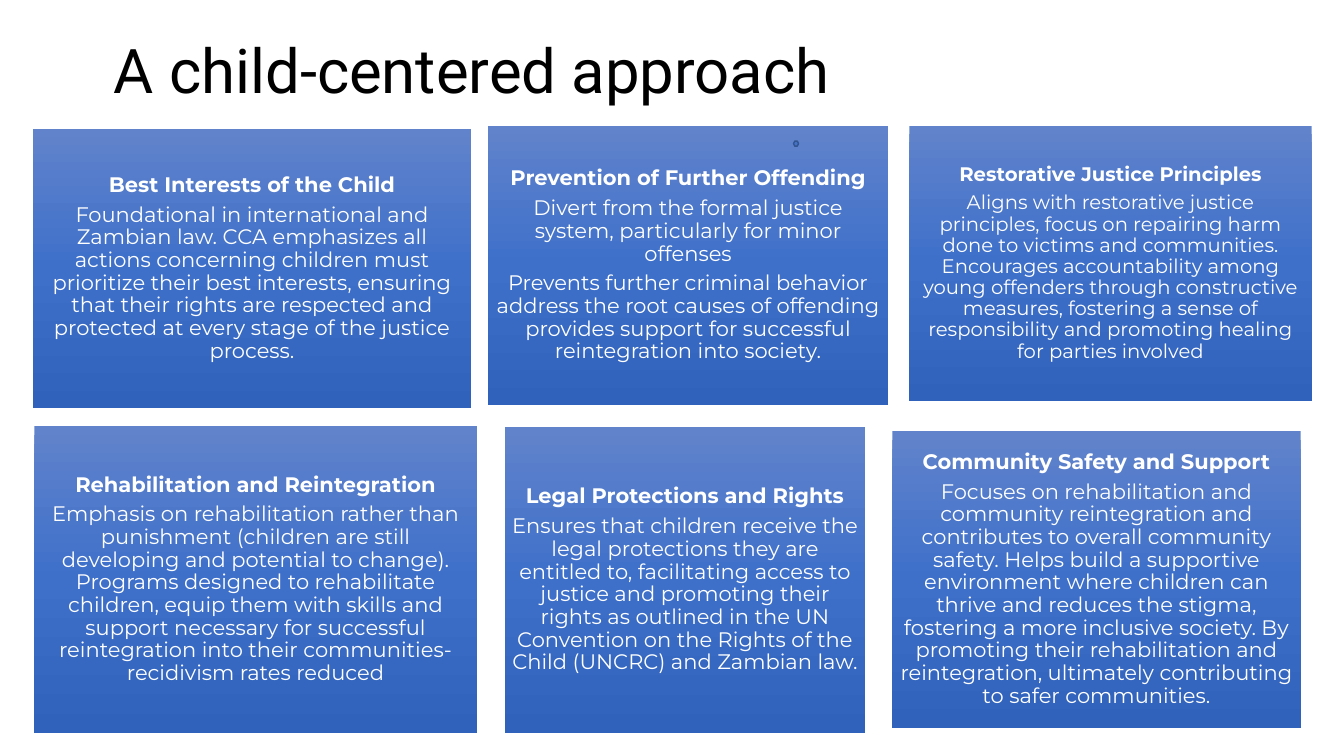
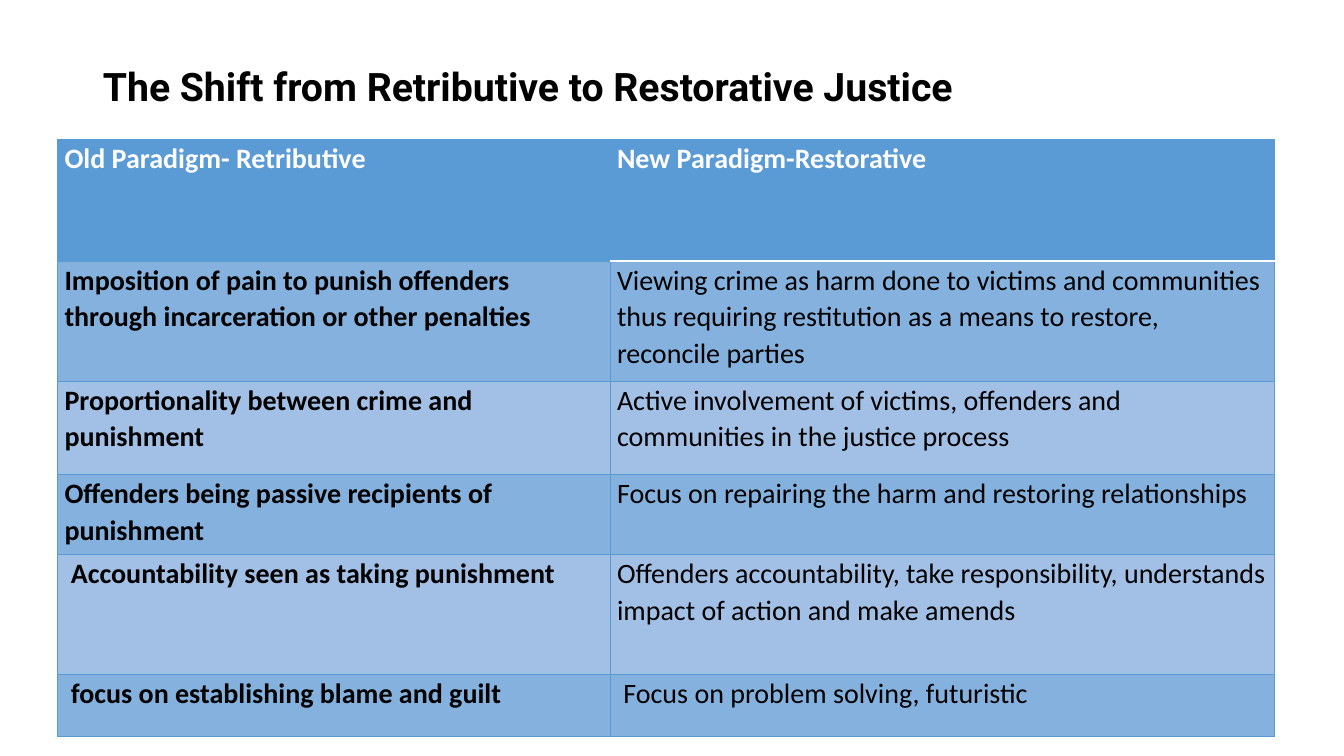
from copy import deepcopy
from dataclasses import dataclass

from lxml import etree
from pptx import Presentation
from pptx.dml.color import RGBColor
from pptx.enum.shapes import MSO_SHAPE
from pptx.enum.text import MSO_ANCHOR, MSO_AUTO_SIZE, PP_ALIGN
from pptx.oxml.ns import qn
from pptx.util import Inches, Pt

RECT, HEXAGON = MSO_SHAPE.RECTANGLE, MSO_SHAPE.HEXAGON
LEFT, CENTER = PP_ALIGN.LEFT, PP_ALIGN.CENTER
MIDDLE, TOP = MSO_ANCHOR.MIDDLE, MSO_ANCHOR.TOP
NO_FIT = MSO_AUTO_SIZE.NONE

# Shared look
WHITE, BLACK = "FFFFFF", "000000"
SHADES = ((0, "6183CB"), (0.5, "3E70CA"), (1, "3062BB"))
HEAD = "5B9BD5"
BANDS = ("85B1DE", "A2BFE5")
TITLE_FONT, CARD_FONT, TABLE_FONT = "Roboto", "Montserrat", "Calibri"


@dataclass
class Box:
    left: float
    top: float
    width: float
    height: float

    def sizes(self) -> tuple:
        return tuple(map(Inches, (self.left, self.top, self.width, self.height)))


@dataclass
class Card:
    box: Box
    head: str
    body: tuple
    size: int = 15


CARDS = (
    Card(Box(0.33, 1.28, 4.34, 2.77), "Best Interests of the Child", (
        "Foundational in international and Zambian law. CCA emphasizes all "
        "actions concerning children must prioritize their best interests, "
        "ensuring that their rights are respected and protected at every "
        "stage of the justice process.",)),
    Card(Box(4.84, 1.25, 3.97, 2.77), "Prevention of Further Offending", (
        "Divert from the formal justice system, particularly for minor offenses",
        "Prevents further criminal behavior address the root causes of "
        "offending provides support for successful reintegration into society.")),
    Card(Box(9.02, 1.25, 3.99, 2.73), "Restorative Justice Principles", (
        "Aligns with restorative justice principles, focus on repairing harm "
        "done to victims and communities. Encourages accountability among "
        "young offenders through constructive measures, fostering a sense of "
        "responsibility and promoting healing for parties involved",), 14),
    Card(Box(0.34, 4.23, 4.39, 3.04), "Rehabilitation and Reintegration", (
        "Emphasis on rehabilitation rather than punishment (children are still "
        "developing and potential to change). Programs designed to "
        "rehabilitate children, equip them with skills and support necessary "
        "for successful reintegration into their communities- recidivism "
        "rates reduced",)),
    Card(Box(5.01, 4.24, 3.57, 3.03), "Legal Protections and Rights", (
        "Ensures that children receive the legal protections they are entitled "
        "to, facilitating access to justice and promoting their rights as "
        "outlined in the UN Convention on the Rights of the Child (UNCRC) and "
        "Zambian law.",)),
    Card(Box(8.85, 4.28, 4.05, 2.94), "Community Safety and Support", (
        "Focuses on rehabilitation and community reintegration and contributes "
        "to overall community safety. Helps build a supportive environment "
        "where children can thrive and reduces the stigma, fostering a more "
        "inclusive society. By promoting their rehabilitation and "
        "reintegration, ultimately contributing to safer communities.",)),
)

COLS = (5.48, 6.59)
# Row height, old paradigm, new paradigm
ROWS = (
    (1.21, "Old Paradigm- Retributive", "New Paradigm-Restorative"),
    (1.19, "Imposition of pain to punish offenders through incarceration or "
           "other penalties",
     "Viewing crime as harm done to victims and communities thus requiring "
     "restitution as a means to restore, reconcile parties"),
    (0.93, "Proportionality between crime and punishment",
     "Active involvement of victims, offenders and communities in the justice "
     "process"),
    (0.79, "Offenders being passive recipients of punishment",
     "Focus on repairing the harm and restoring relationships"),
    (1.19, " Accountability seen as taking punishment",
     "Offenders accountability, take responsibility, understands impact of "
     "action and make amends"),
    (0.62, " focus on establishing blame and guilt",
     " Focus on problem solving, futuristic"),
)


def rgb(color: str) -> RGBColor:
    return RGBColor.from_string(color)


def style(para, font: str, size: int, color: str, bold: bool = False,
          align=LEFT, line: float = 0.9, after: int = 0) -> None:
    para.alignment = align
    para.line_spacing = line
    para.space_before, para.space_after = Pt(0), Pt(after)
    para.font.name, para.font.size = font, Pt(size)
    para.font.bold = bold
    para.font.color.rgb = rgb(color)


def pad(item, side: float, edge: float) -> None:
    item.margin_left = item.margin_right = Inches(side)
    item.margin_top = item.margin_bottom = Inches(edge)


def add_slide(deck, text: str, box: Box, size: int, bold: bool = False):
    slide = deck.slides.add_slide(deck.slide_layouts[5])
    title = slide.shapes.title
    title.left, title.top, title.width, title.height = box.sizes()
    frame = title.text_frame
    frame.text = text
    frame.word_wrap, frame.auto_size = True, NO_FIT
    frame.vertical_anchor = MIDDLE
    style(frame.paragraphs[0], TITLE_FONT, size, BLACK, bold)
    return slide


def shade(shape) -> None:
    """Fill a shape with the vertical three-stop gradient."""
    shape.fill.gradient()
    shape.fill.gradient_angle = 270
    stops = shape._element.spPr.find(qn("a:gradFill")).find(qn("a:gsLst"))
    stops.append(deepcopy(stops[0]))
    for stop, (place, color) in zip(shape.fill.gradient_stops, SHADES):
        stop.position = place
        stop.color.rgb = rgb(color)


def add_card(slide, card: Card) -> None:
    shape = slide.shapes.add_shape(RECT, *card.box.sizes())
    shape.shadow.inherit = False
    shape.line.fill.background()
    shade(shape)
    frame = shape.text_frame
    frame.word_wrap, frame.vertical_anchor = True, MIDDLE
    pad(frame, 0.06, 0.06)
    frame.text = "\n".join((card.head, *card.body))
    for i, para in enumerate(frame.paragraphs):
        style(para, CARD_FONT, card.size, WHITE, i == 0, CENTER, after=5)


def add_dot(slide, box: Box) -> None:
    dot = slide.shapes.add_shape(HEXAGON, *box.sizes())
    dot.shadow.inherit = False
    dot.fill.solid()
    dot.fill.fore_color.rgb = rgb("4472C4")
    dot.line.color.rgb = rgb("325491")
    dot.line.width = Pt(1)


def edge(cell, side: str, color: str, width: float) -> None:
    line = etree.SubElement(cell._tc.get_or_add_tcPr(), qn(f"a:ln{side}"),
                            w=str(Pt(width)))
    fill = etree.SubElement(line, qn("a:solidFill"))
    etree.SubElement(fill, qn("a:srgbClr"), val=color)


def fill_cell(cell, text: str, row: int, col: int) -> None:
    # The rule under the right heading is white
    white = {0: "B", 1: "T"}.get(row) if col else None
    for side in "LRTB":
        if side == white:
            edge(cell, side, WHITE, 1)
        else:
            edge(cell, side, HEAD, 0.5)
    cell.fill.solid()
    cell.fill.fore_color.rgb = rgb(BANDS[(row - 1) % 2] if row else HEAD)
    cell.vertical_anchor = TOP
    pad(cell, 0.07, 0)
    cell.text = text
    style(cell.text_frame.paragraphs[0], TABLE_FONT, 20,
          BLACK if row else WHITE, row == 0 or col == 0, line=1.07)


def add_grid(slide, left: float, top: float) -> None:
    box = Box(left, top, sum(COLS), sum(row[0] for row in ROWS))
    table = slide.shapes.add_table(len(ROWS), len(COLS), *box.sizes()).table
    table.horz_banding = False
    for col, width in zip(table.columns, COLS):
        col.width = Inches(width)
    for r, (height, *texts) in enumerate(ROWS):
        table.rows[r].height = Inches(height)
        for c, text in enumerate(texts):
            fill_cell(table.cell(r, c), text, r, c)


def main() -> None:
    deck = Presentation()
    deck.slide_width, deck.slide_height = Inches(13.33), Inches(7.5)

    # Slide 1: six principles
    slide = add_slide(deck, "A child-centered approach",
                      Box(1.03, 0, 11.5, 1.45), 44)
    for card in CARDS:
        add_card(slide, card)
    add_dot(slide, Box(7.87, 1.4, 0.05, 0.05))

    # Slide 2: old and new paradigm
    slide = add_slide(deck, "The Shift from Retributive to Restorative Justice",
                      Box(0.92, 0.4, 11.5, 0.97), 28, True)
    add_grid(slide, 0.57, 1.38)

    deck.save("out.pptx")


if __name__ == "__main__":
    main()
